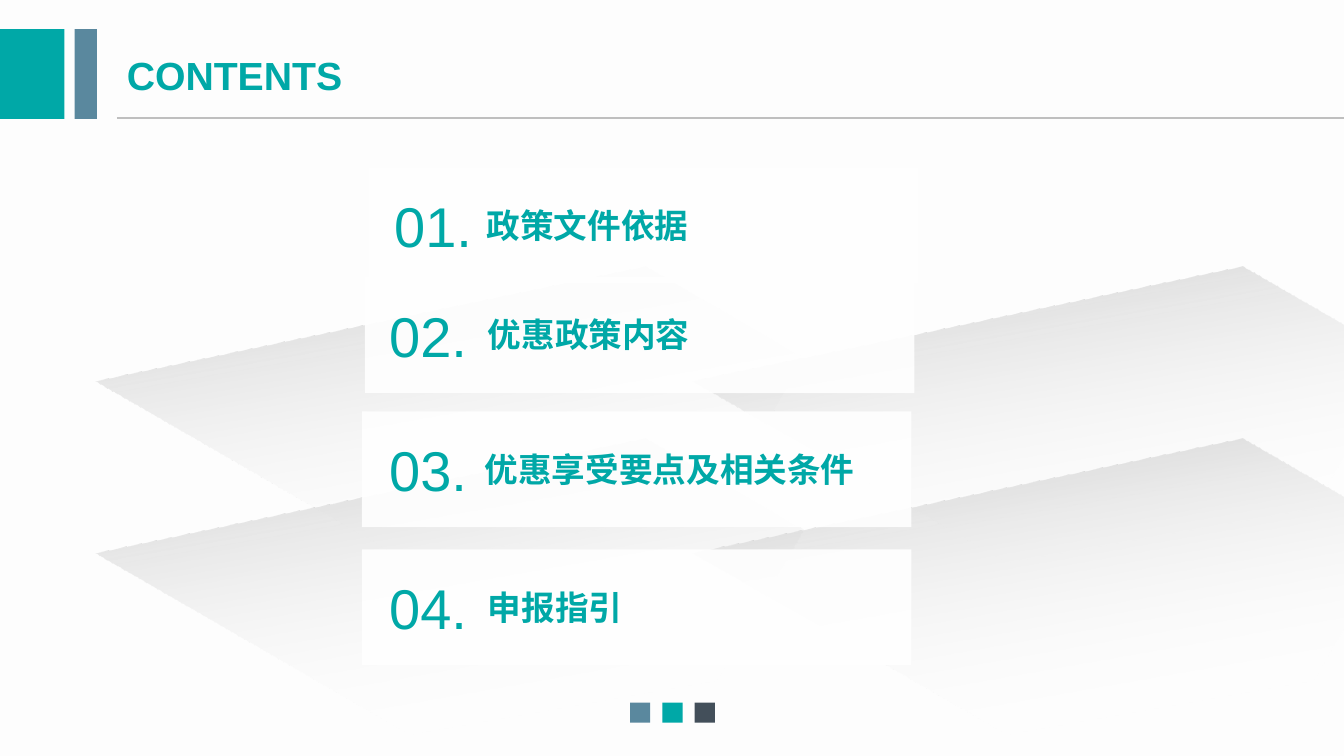
import pptx
import pptx.dml.color
import pptx.enum.dml
import pptx.enum.shapes
import pptx.enum.text
import pptx.oxml.ns
import pptx.util
from lxml import etree

Inches = pptx.util.Inches
ALIGN = pptx.enum.text.PP_ALIGN
COLORS = {
    "teal": "00A8A7", "blue": "5A889E", "slate": "434F5A", "rule": "BFBFBF",
    "gray": "808080", "white": "FFFFFF", "paper": "FDFDFD",
}
FORMATS = {
    "title": {"size": pptx.util.Pt(28), "bold": True, "name": "Arial"},
    "number": {"size": pptx.util.Pt(40), "bold": False, "name": "Arial"},
    "label": {"size": pptx.util.Pt(24), "bold": True, "name": "Noto Sans CJK SC"},
}
ENTRIES = [
    ("01.", "政策文件依据", 3.66, 1.66, 3.61, 4.73),
    ("02.", "优惠政策内容", 3.62, 2.75, 3.56, 4.74),
    ("03.", "优惠享受要点及相关条件", 3.59, 4.08, 3.56, 4.71),
    ("04.", "申报指引", 3.59, 5.45, 3.56, 4.74),
]


def color(name):
    """Return the named colour as an RGB value."""
    return pptx.dml.color.RGBColor.from_string(COLORS[name])


def set_alpha(shape, percent):
    """Set the opacity of the last colour in the shape's fill."""
    tint = shape._element.spPr.findall(".//" + pptx.oxml.ns.qn("a:srgbClr"))[-1]
    etree.SubElement(tint, pptx.oxml.ns.qn("a:alpha"), val=str(percent * 1000))


def add_block(page, left, top, width, height, fill):
    """Add a plain filled rectangle."""
    block = page.shapes.add_shape(
        pptx.enum.shapes.MSO_SHAPE.RECTANGLE,
        Inches(left), Inches(top), Inches(width), Inches(height))
    block.shadow.inherit = False
    block.fill.solid()
    block.fill.fore_color.rgb = color(fill)
    block.line.fill.background()
    return block


def add_text(page, left, top, width, height, text, style, align=ALIGN.LEFT):
    """Add a one-line teal text box in the given style."""
    box = page.shapes.add_textbox(Inches(left), Inches(top), Inches(width), Inches(height))
    box.text_frame.word_wrap = True
    box.text_frame.auto_size = pptx.enum.text.MSO_AUTO_SIZE.SHAPE_TO_FIT_TEXT
    para = box.text_frame.paragraphs[0]
    para.alignment = align
    span = para.add_run()
    span.text = text
    for key, value in FORMATS[style].items():
        setattr(span.font, key, value)
    span.font.color.rgb = color("teal")
    etree.SubElement(span.font._element, pptx.oxml.ns.qn("a:ea"),
                     typeface=FORMATS[style]["name"])


def add_header(page, top):
    """Draw the header blocks, rule and title below the given top."""
    add_block(page, 0, top, 0.64, 0.89, "teal")
    add_block(page, 0.74, top, 0.22, 0.89, "blue")
    rule = page.shapes.add_connector(
        pptx.enum.shapes.MSO_CONNECTOR.STRAIGHT,
        Inches(1.16), Inches(top + 0.88), Inches(13.33), Inches(top + 0.88))
    rule.line.color.rgb = color("rule")
    rule.line.width = pptx.util.Pt(1.5)
    etree.SubElement(rule._element.spPr, pptx.oxml.ns.qn("a:effectLst"))
    add_text(page, 1.16, top + 0.17, 3.6, 0.57, "CONTENTS", "title")


def add_footer(page, left, top):
    """Draw the row of three small squares."""
    for index, name in enumerate(["blue", "teal", "slate"]):
        add_block(page, left + index * 0.32, top, 0.2, 0.2, name)


def add_sheet(page, left, top, width, height):
    """Draw one tilted sheet that fades out downwards."""
    corners = [(4.15, 0), (width, 0), (width, height)]
    builder = page.shapes.build_freeform(
        Inches(left), Inches(top + height), scale=1.0)
    builder.add_line_segments(
        [(Inches(left + x), Inches(top + y)) for x, y in corners], close=True)
    sheet = builder.convert_to_shape()
    sheet.rotation = 30
    sheet.shadow.inherit = False
    sheet.line.fill.background()
    sheet.fill.gradient()
    sheet.fill.gradient_angle = 310
    stops = zip(sheet.fill.gradient_stops, [(0, "gray"), (0.75, "white")])
    for stop, (position, name) in stops:
        stop.position = position
        stop.color.rgb = color(name)
    set_alpha(sheet, 0)


def add_entry(page, entry):
    """Draw one contents card with its number and label."""
    number, label, left, top, number_left, label_left = entry
    card = add_block(page, left, top, 5.45, 1.15, "white")
    set_alpha(card, 90)
    add_text(page, label_left, top + 0.32, 4.4, 0.5, label, "label")
    add_text(page, number_left, top + 0.19, 1.17, 0.77, number, "number", ALIGN.RIGHT)


def main():
    """Build and save the contents slide."""
    deck = pptx.Presentation()
    deck.slide_width, deck.slide_height = Inches(13.33), Inches(7.5)
    page = deck.slides.add_slide(deck.slide_layouts[6])
    page.background.fill.solid()
    page.background.fill.fore_color.rgb = color("paper")
    add_header(page, 0.29)
    add_footer(page, 6.25, 6.97)
    for left in (1.48, 7.4):
        for top in (1.81, 3.52):
            add_sheet(page, left, top, 5.96, 3.71)
    for entry in ENTRIES:
        add_entry(page, entry)
    deck.save("out.pptx")


if __name__ == "__main__":
    main()
